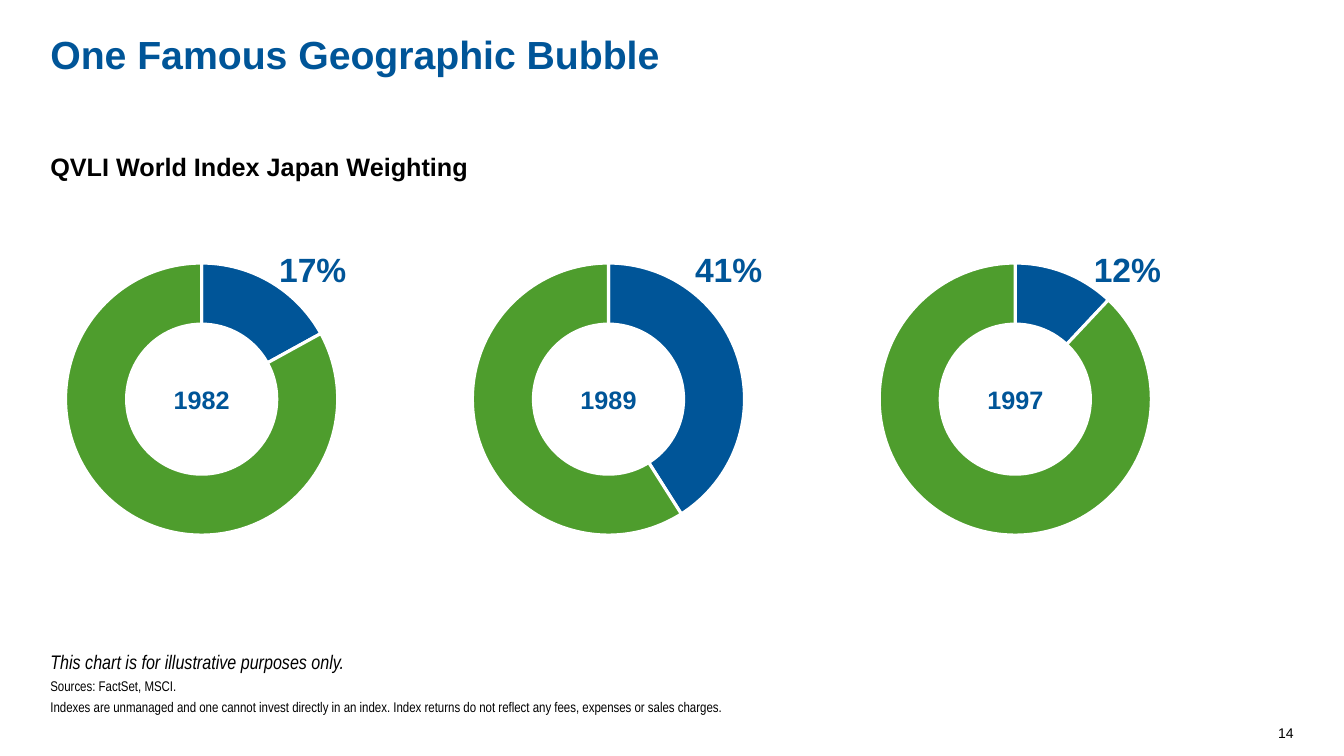
from pptx import Presentation
from pptx.chart.data import CategoryChartData
from pptx.dml.color import RGBColor
from pptx.enum.chart import XL_CHART_TYPE
from pptx.enum.shapes import MSO_SHAPE
from pptx.enum.text import MSO_ANCHOR, PP_ALIGN
from pptx.oxml import parse_xml
from pptx.oxml.ns import nsdecls, qn
from pptx.util import Pt

PX = 9144  # 100 px to the inch
PIE, OVAL = XL_CHART_TYPE.PIE, MSO_SHAPE.OVAL
TOP, MID, LOW = MSO_ANCHOR.TOP, MSO_ANCHOR.MIDDLE, MSO_ANCHOR.BOTTOM
LEFT, MIDST, RIGHT = PP_ALIGN.LEFT, PP_ALIGN.CENTER, PP_ALIGN.RIGHT
COLORS = {"blue": "005598", "green": "4E9D2D", "white": "FFFFFF", "black": "000000"}
PIES = [("1982", 17, 217), ("1989", 41, 226), ("1997", 12, 218)]
SIZE, PITCH = 300, 403.5


def color(name):
    return RGBColor.from_string(COLORS[name])


def emu(*box):
    return [round(n * PX) for n in box]


def style(font, size, tint="black", face="Arial", bold=False, italic=False):
    font.size, font.name = Pt(size), face
    font.bold, font.italic = bold, italic
    font.color.rgb = color(tint)


def text(slide, box, lines, size, anchor=TOP, align=LEFT, after=0,
         inset=(0, 0), wrap=True, **look):
    """Add a text box with one paragraph for each line."""
    frame = slide.shapes.add_textbox(*emu(*box)).text_frame
    frame.word_wrap, frame.vertical_anchor = wrap, anchor
    frame.margin_left = frame.margin_right = inset[0] * PX
    frame.margin_top = frame.margin_bottom = inset[1] * PX
    frame.text = "\n".join(lines)
    for para in frame.paragraphs:
        para.alignment, para.space_after = align, Pt(after)
        style(para.font, size, **look)


def layout(chart):
    """Inset the pie by 5% on each side of its frame."""
    area = chart._chartSpace.chart.plotArea
    for old in area.findall(qn("c:layout")):
        area.remove(old)
    area.insert(0, parse_xml(
        f'<c:layout {nsdecls("c")}><c:manualLayout><c:layoutTarget val="inner"/>'
        '<c:xMode val="edge"/><c:yMode val="edge"/><c:x val="0.05"/><c:y val="0.05"/>'
        '<c:w val="0.9"/><c:h val="0.9"/></c:manualLayout></c:layout>'))


def pie(slide, left, top, share):
    data = CategoryChartData()
    data.categories = ["1", "2"]
    data.add_series("Series 1", [share, 100 - share])
    chart = slide.shapes.add_chart(PIE, *emu(left, top, SIZE, SIZE), data).chart
    chart.has_legend = chart.has_title = False
    style(chart.font, 18, face="Calibri")
    plot = chart.plots[0]
    plot.vary_by_categories = True
    for i, tint in enumerate(("blue", "green")):
        part = plot.series[0].points[i].format
        part.fill.solid()
        part.fill.fore_color.rgb = color(tint)
        part.line.color.rgb = color("white")
        part.line.width = Pt(2.25)
    layout(chart)


def hole(slide, left, top, year):
    disc = slide.shapes.add_shape(OVAL, *emu(left + 74, top + 74, 152, 152))
    disc.shadow.inherit = False
    disc.fill.solid()
    disc.fill.fore_color.rgb = color("white")
    disc.line.fill.background()
    frame = disc.text_frame
    frame.text, frame.vertical_anchor = year, MID
    para = frame.paragraphs[0]
    para.alignment = MIDST
    style(para.font, 18, "blue", bold=True)


def donut(slide, left, top, year, share, shift):
    pie(slide, left, top, share)
    hole(slide, left, top, year)
    text(slide, (left + shift, top - 4, 88, 50), [f"{share}%"], 24,
         inset=(10, 5), wrap=False, tint="blue", bold=True)


def header(slide, left, top):
    text(slide, (left, top, 950, 100), ["One Famous Geographic Bubble"], 28,
         tint="blue", bold=True)
    text(slide, (left, top + 120, 580, 30), ["QVLI World Index Japan Weighting"], 18,
         bold=True)


def footer(slide, left, top):
    text(slide, (left, top, 294, 24), ["This chart is for illustrative purposes only."],
         14, LOW, after=3, wrap=False, face="Arial Narrow", italic=True)
    text(slide, (left, top + 28, 1233, 38),
         ["Sources: FactSet, MSCI.",
          "Indexes are unmanaged and one cannot invest directly in an index. "
          "Index returns do not reflect any fees, expenses or sales charges."],
         10, LOW, after=3, face="Arial Narrow")
    text(slide, (left + 1193, top + 71, 40, 20), ["14"], 10, LOW, RIGHT)


def main():
    deck = Presentation()
    deck.slide_width, deck.slide_height = emu(1333, 750)
    slide = deck.slides.add_slide(deck.slide_layouts[6])
    header(slide, 50, 30)
    for i, (year, share, shift) in enumerate(PIES):
        donut(slide, 50 + i * PITCH, 246, year, share, shift)
    footer(slide, 50, 644)
    deck.save("out.pptx")


if __name__ == "__main__":
    main()
